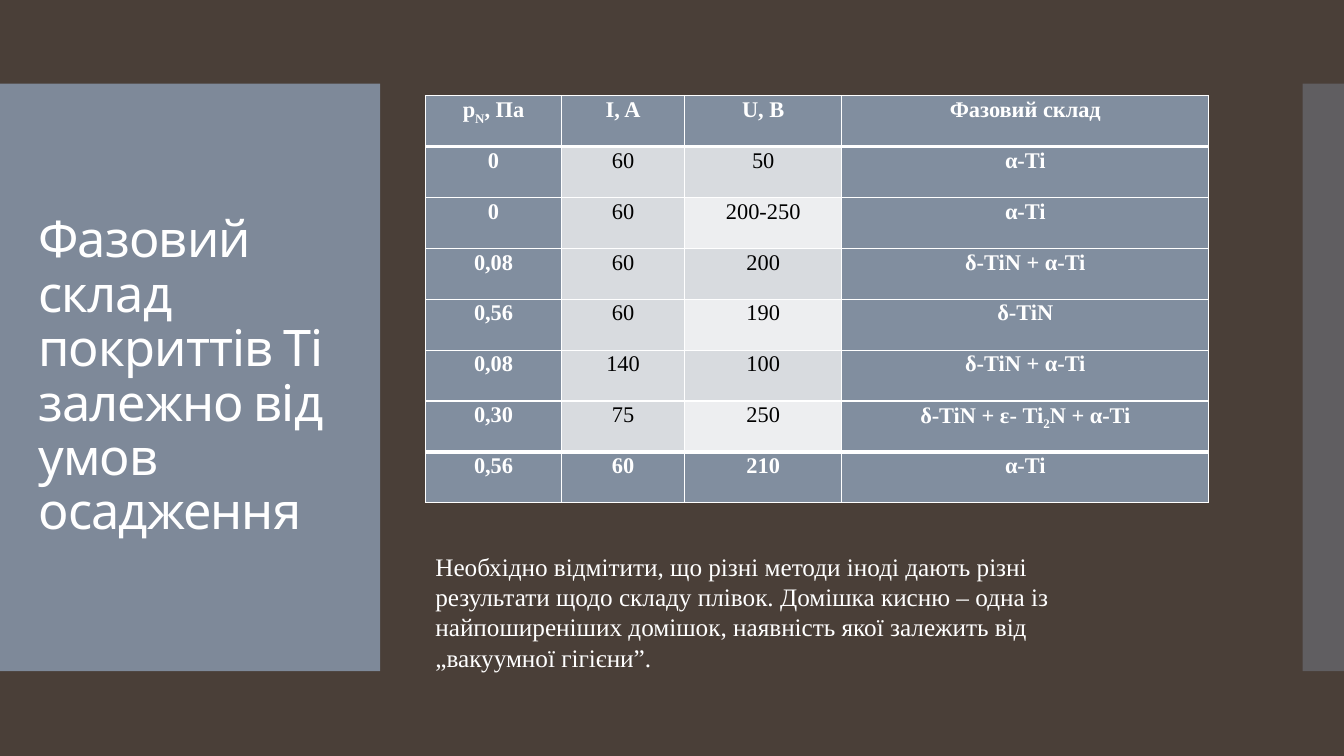
from lxml import etree
from pptx import Presentation
from pptx.dml.color import RGBColor
from pptx.enum.shapes import MSO_SHAPE
from pptx.enum.text import MSO_ANCHOR, MSO_AUTO_SIZE, PP_ALIGN
from pptx.oxml.ns import qn
from pptx.util import Inches, Pt

RECTANGLE = MSO_SHAPE.RECTANGLE
MIDDLE = MSO_ANCHOR.MIDDLE
LEFT, CENTER = PP_ALIGN.LEFT, PP_ALIGN.CENTER
NO_AUTOFIT, GROW = MSO_AUTO_SIZE.NONE, MSO_AUTO_SIZE.SHAPE_TO_FIT_TEXT

BROWN = RGBColor(0x4A, 0x3F, 0x38)
SLATE = RGBColor(0x81, 0x8E, 0x9F)
BAND_DARK = RGBColor(0xD8, 0xDB, 0xDF)
BAND_LIGHT = RGBColor(0xED, 0xEE, 0xF0)
WHITE = RGBColor(0xFF, 0xFF, 0xFF)
BLACK = RGBColor(0, 0, 0)

TITLE = "Фазовий склад покриттів Ті залежно від умов осадження"
NOTE = (
    "Необхідно відмітити, що різні методи іноді дають різні результати щодо "
    "складу плівок. Домішка кисню – одна із найпоширеніших домішок, наявність "
    "якої залежить від „вакуумної гігієни”."
)
COLUMN_WIDTHS = [1.35, 1.22, 1.56, 3.64]
ROW_HEIGHT = 0.505
PHASES = [
    ["p_N_, Па", "I, A", "U, B", "Фазовий склад"],
    ["0", "60", "50", "α-Ti"],
    ["0", "60", "200-250", "α-Ti"],
    ["0,08", "60", "200", "δ-TiN + α-Ti"],
    ["0,56", "60", "190", "δ-TiN"],
    ["0,08", "140", "100", "δ-TiN + α-Ti"],
    ["0,30", "75", "250", "δ-TiN + ε- Ti_2_N + α-Ti"],
    ["0,56", "60", "210", "α-Ti"],
]


class PhaseSlide:
    """Holds the slide and its style, with one method per kind of element."""

    title_font = "Cabin"
    body_font = "Times New Roman"

    def __init__(self, deck):
        self.slide = deck.slides.add_slide(deck.slide_layouts[5])
        background = self.slide.background.fill
        background.solid()
        background.fore_color.rgb = BROWN

    def add_run(self, paragraph, text, size, font, color=WHITE, bold=False):
        run = paragraph.add_run()
        run.text = text
        run.font.size = Pt(size)
        run.font.name = font
        run.font.bold = bold
        run.font.color.rgb = color
        return run

    def panel(self, left, width, opacity):
        panel = self.slide.shapes.add_shape(
            RECTANGLE, Inches(left), Inches(0.83), Inches(width), Inches(5.83)
        )
        panel.shadow.inherit = False
        panel.line.fill.background()
        panel.fill.solid()
        panel.fill.fore_color.rgb = SLATE
        color = panel.fill._xPr.find(qn("a:solidFill"))[0]
        etree.SubElement(color, qn("a:alpha"), val=str(opacity * 1000))

    def title(self, text, left, top, width, height):
        title = self.slide.shapes.title
        title.left, title.top = Inches(left), Inches(top)
        title.width, title.height = Inches(width), Inches(height)
        frame = title.text_frame
        frame.word_wrap = True
        frame.auto_size = NO_AUTOFIT
        frame.vertical_anchor = MIDDLE
        paragraph = frame.paragraphs[0]
        paragraph.alignment = LEFT
        paragraph.line_spacing = 0.9
        run = self.add_run(paragraph, text, 36, self.title_font)
        run.font._element.set("spc", "-60")

    def note(self, text, left, top, width, height):
        note = self.slide.shapes.add_textbox(
            Inches(left), Inches(top), Inches(width), Inches(height)
        )
        note.text_frame.word_wrap = True
        note.text_frame.auto_size = GROW
        self.add_run(note.text_frame.paragraphs[0], text, 18, self.body_font)

    def border(self, cell, top, bottom):
        properties = cell._tc.get_or_add_tcPr()
        for side, width in (("L", 1), ("R", 1), ("T", top), ("B", bottom)):
            line = etree.SubElement(properties, qn(f"a:ln{side}"), w=str(Pt(width)))
            fill = etree.SubElement(line, qn("a:solidFill"))
            etree.SubElement(fill, qn("a:srgbClr"), val=str(WHITE))

    def cell(self, cell, text, fill, color, bold):
        cell.margin_left = cell.margin_right = Inches(0.07)
        cell.margin_top = cell.margin_bottom = 0
        cell.fill.solid()
        cell.fill.fore_color.rgb = fill
        paragraph = cell.text_frame.paragraphs[0]
        paragraph.alignment = CENTER
        paragraph.line_spacing = 1.07
        for index, part in enumerate(text.split("_")):
            run = self.add_run(paragraph, part, 16, self.body_font, color, bold)
            if index % 2:
                run.font._element.set("baseline", "-25000")

    def table(self, rows, left, top):
        table = self.slide.shapes.add_table(
            len(rows), len(COLUMN_WIDTHS), Inches(left), Inches(top),
            Inches(sum(COLUMN_WIDTHS)), Inches(ROW_HEIGHT * len(rows)),
        ).table
        for column, width in zip(table.columns, COLUMN_WIDTHS):
            column.width = Inches(width)
        last = len(rows) - 1
        for r, row in enumerate(rows):
            table.rows[r].height = Inches(ROW_HEIGHT)
            for c, text in enumerate(row):
                cell = table.cell(r, c)
                self.border(cell, 3 if r in (1, last) else 1,
                            3 if r in (0, last - 1) else 1)
                if r in (0, last) or c in (0, 3):
                    self.cell(cell, text, SLATE, WHITE, True)
                else:
                    band = BAND_LIGHT if c == 2 and r % 2 == 0 else BAND_DARK
                    self.cell(cell, text, band, BLACK, False)


def main():
    deck = Presentation()
    deck.slide_width, deck.slide_height = Inches(13.33), Inches(7.5)
    slide = PhaseSlide(deck)
    slide.panel(0, 3.77, 95)
    slide.panel(12.92, 0.41, 40)
    slide.title(TITLE, 0.28, 1.23, 3.22, 5.03)
    tree = slide.slide.shapes._spTree
    tree.append(slide.slide.shapes.title._element)
    slide.table(PHASES, 4.22, 0.95)
    slide.note(NOTE, 4.22, 5.42, 6.67, 1.31)
    deck.save("out.pptx")


if __name__ == "__main__":
    main()
